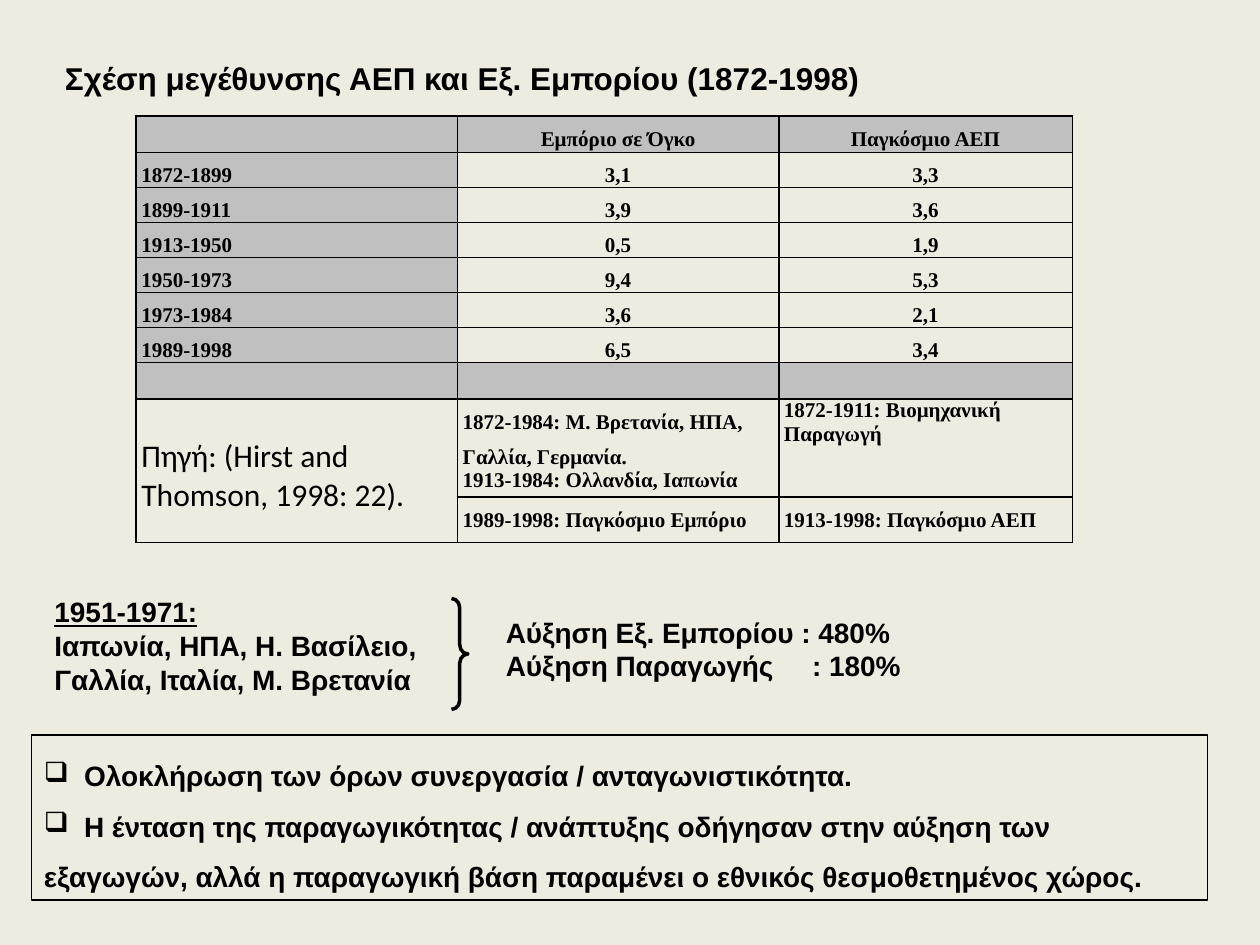
from lxml import etree
from pptx import Presentation
from pptx.dml.color import RGBColor
from pptx.enum.shapes import MSO_SHAPE
from pptx.enum.text import MSO_ANCHOR, PP_ALIGN
from pptx.oxml.ns import qn
from pptx.util import Pt

BLACK = RGBColor(0x00, 0x00, 0x00)
CREAM = RGBColor(0xEE, 0xEC, 0xE1)
GREY = RGBColor(0xC0, 0xC0, 0xC0)
RECT, BRACE = MSO_SHAPE.RECTANGLE, MSO_SHAPE.RIGHT_BRACE
TOP, MIDDLE = MSO_ANCHOR.TOP, MSO_ANCHOR.MIDDLE
LEFT, CENTER = PP_ALIGN.LEFT, PP_ALIGN.CENTER

COLUMNS = [183.6, 183.6, 167.8]
HEADER = ["", "Εμπόριο σε Όγκο", "Παγκόσμιο ΑΕΠ"]
GROWTH = [
    ["1872-1899", "3,1", "3,3"],
    ["1899-1911", "3,9", "3,6"],
    ["1913-1950", "0,5", "1,9"],
    ["1950-1973", "9,4", "5,3"],
    ["1973-1984", "3,6", "2,1"],
    ["1989-1998", "6,5", "3,4"],
]
HEIGHTS = [20.9] + [18.7] * len(GROWTH) + [20.9, 56, 26]


class SlideStyle:
    def __init__(self, slide):
        self.slide = slide
        self.font = "Arial"
        self.table_font = "Times New Roman"
        slide.background.fill.solid()
        slide.background.fill.fore_color.rgb = CREAM

    def run(self, p, text, size, font=None, bold=True, underline=False):
        r = p.add_run()
        r.text = text
        f = r.font
        f.size, f.name, f.bold = Pt(size), font or self.font, bold
        f.color.rgb = BLACK
        if underline:
            f.underline = True

    def lines(self, tf, texts, size, spacing=None, bullet=None, tab=None, underlined=()):
        """Write one left-aligned paragraph per text."""
        tf.word_wrap = True
        for i, text in enumerate(texts):
            p = tf.paragraphs[0] if i == 0 else tf.add_paragraph()
            p.alignment = LEFT
            if spacing:
                p.line_spacing = spacing
            pPr = p._p.get_or_add_pPr()
            if bullet:
                etree.SubElement(pPr, qn("a:buChar"), char=bullet)
            if tab:
                tabs = etree.SubElement(pPr, qn("a:tabLst"))
                etree.SubElement(tabs, qn("a:tab"), pos=str(Pt(tab)), algn="l")
            self.run(p, text, size, underline=i in underlined)

    def text(self, x, y, w, h, texts, size, **options):
        sp = self.slide.shapes.add_textbox(Pt(x), Pt(y), Pt(w), Pt(h))
        sp.text_frame.vertical_anchor = MIDDLE
        self.lines(sp.text_frame, texts, size, **options)

    def shape(self, kind, x, y, w, h, fill=None, line=None):
        sp = self.slide.shapes.add_shape(kind, Pt(x), Pt(y), Pt(w), Pt(h))
        sp.shadow.inherit = False
        if fill is None:
            sp.fill.background()
        else:
            sp.fill.solid()
            sp.fill.fore_color.rgb = fill
        if line is None:
            sp.line.fill.background()
        else:
            sp.line.color.rgb = BLACK
            sp.line.width = Pt(line)
        return sp

    def table(self, x, y, widths, heights):
        frame = self.slide.shapes.add_table(
            len(heights), len(widths), Pt(x), Pt(y), Pt(sum(widths)), Pt(sum(heights)))
        table = frame.table
        table.first_row = table.horz_banding = False
        for column, width in zip(table.columns, widths):
            column.width = Pt(width)
        for row, height in zip(table.rows, heights):
            row.height = Pt(height)
        for cell in table.iter_cells():
            self.cell_frame(cell)
        return table

    def cell_frame(self, cell):
        """Set the margins and the thin black borders of a cell."""
        cell.margin_left = cell.margin_right = Pt(3)
        cell.margin_top = cell.margin_bottom = 0
        tcPr = cell._tc.get_or_add_tcPr()
        for side in ("lnL", "lnR", "lnT", "lnB"):
            ln = etree.SubElement(tcPr, qn(f"a:{side}"), w=str(Pt(1)))
            fill = etree.SubElement(ln, qn("a:solidFill"))
            etree.SubElement(fill, qn("a:srgbClr"), val=str(BLACK))
        cell.fill.background()

    def cell(self, cell, texts, align=LEFT, spacings=(1.5,), fill=None,
             size=12, font=None, bold=True):
        if fill is not None:
            cell.fill.solid()
            cell.fill.fore_color.rgb = fill
        tf = cell.text_frame
        for i, (text, spacing) in enumerate(zip(texts, spacings)):
            p = tf.paragraphs[0] if i == 0 else tf.add_paragraph()
            p.alignment, p.line_spacing = align, spacing
            if text:
                self.run(p, text, size, font or self.table_font, bold)
            else:
                etree.SubElement(p._p, qn("a:endParaRPr"), sz=str(size * 100))


def add_growth_table(style):
    table = style.table(77.8, 66.2, COLUMNS, HEIGHTS)
    for r, row in enumerate([HEADER] + GROWTH + [[""] * 3]):
        for c, text in enumerate(row):
            shaded = c == 0 or r in (0, len(GROWTH) + 1)
            style.cell(table.cell(r, c), [text], LEFT if c == 0 else CENTER,
                       fill=GREY if shaded else None)

    first = len(GROWTH) + 2
    source = table.cell(first, 0)
    source.merge(table.cell(first + 1, 0))
    source.margin_top = Pt(22)
    style.cell(source, ["Πηγή: (Hirst and Thomson, 1998: 22)."], spacings=(1.0,),
               size=18, font="Calibri", bold=False)
    style.cell(table.cell(first, 1),
               ["1872-1984: Μ. Βρετανία, ΗΠΑ, Γαλλία, Γερμανία.",
                "1913-1984: Ολλανδία, Ιαπωνία"], spacings=(1.5, 1.0))
    style.cell(table.cell(first, 2), ["1872-1911: Βιομηχανική Παραγωγή"], spacings=(1.0,))
    style.cell(table.cell(first + 1, 1), ["1989-1998: Παγκόσμιο Εμπόριο"])
    style.cell(table.cell(first + 1, 2), ["1913-1998: Παγκόσμιο ΑΕΠ"])


def main():
    prs = Presentation()
    prs.slide_width, prs.slide_height = Pt(720), Pt(540)
    style = SlideStyle(prs.slides.add_slide(prs.slide_layouts[6]))

    add_growth_table(style)
    style.text(30, 30, 480, 29, ["Σχέση μεγέθυνσης ΑΕΠ και Εξ. Εμπορίου (1872-1998)"], 18)

    increase = style.shape(RECT, 282, 348, 246, 50.4, fill=CREAM)
    increase.text_frame.vertical_anchor = TOP
    style.lines(increase.text_frame,
                ["Αύξηση Εξ. Εμπορίου : 480%", "Αύξηση Παραγωγής\t: 180%"], 16, tab=175)

    brace = style.shape(BRACE, 258, 342, 9.4, 63.4, line=2)
    brace.adjustments[0] = 0.56
    style.text(24, 336, 234, 65.5,
               ["1951-1971:", "Ιαπωνία, ΗΠΑ, Η. Βασίλειο,", "Γαλλία, Ιταλία, Μ. Βρετανία"],
               16, underlined=(0,))

    conclusions = style.shape(RECT, 18, 420, 672, 94.3, line=0.75)
    conclusions.text_frame.vertical_anchor = MIDDLE
    style.lines(conclusions.text_frame,
                ["\tΟλοκλήρωση των όρων συνεργασία / ανταγωνιστικότητα.",
                 "\tΗ ένταση της παραγωγικότητας / ανάπτυξης οδήγησαν στην αύξηση των "
                 "εξαγωγών, αλλά η παραγωγική βάση παραμένει ο εθνικός θεσμοθετημένος χώρος."],
                16, spacing=1.5, bullet="❑", tab=23)

    prs.save("out.pptx")


if __name__ == "__main__":
    main()
